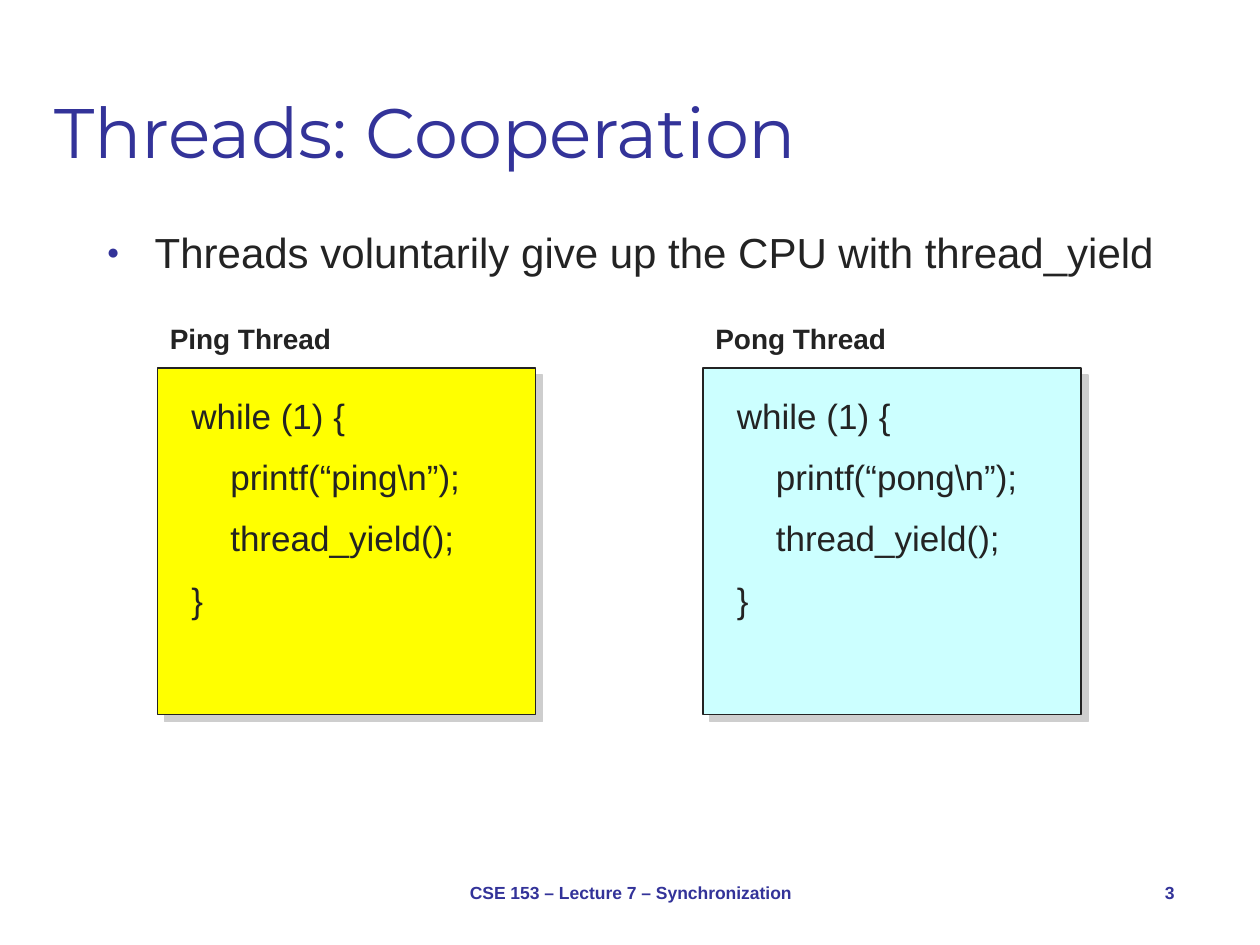
import pptx
import pptx.util
import pptx.dml.color
import pptx.enum.shapes
import pptx.enum.text
import pptx.oxml
import pptx.oxml.ns
from pptx.util import Inches, Pt

COLORS = {
    "navy": "333399",
    "ink": "232323",
    "yellow": "FFFF00",
    "cyan": "CCFFFF",
    "shadow": "CECECE",
}
TITLE = "Threads: Cooperation"
BULLET = "Threads voluntarily give up the CPU with thread_yield"
THREADS = [("Ping Thread", "ping", "yellow", 1.25), ("Pong Thread", "pong", "cyan", 5.58)]
ALIGN = pptx.enum.text.PP_ALIGN
ANCHOR = pptx.enum.text.MSO_ANCHOR
FOOTERS = [
    ("CSE 153 – Lecture 7 – Synchronization", 3.42, 3.17, ALIGN.CENTER),
    ("3", 8.75, 0.67, ALIGN.RIGHT),
]
BOX_TOP, BOX_WIDTH, BOX_HEIGHT = 2.92, 3, 2.75
CODE_INDENT = 0.31


def rgb(name):
    return pptx.dml.color.RGBColor.from_string(COLORS[name])


def write(shape, text, size, color, bold=False, font="Arial", align=ALIGN.LEFT,
          anchor=ANCHOR.TOP, space=0):
    frame = shape.text_frame
    frame.text = text
    frame.word_wrap = True
    frame.vertical_anchor = anchor
    for paragraph in frame.paragraphs:
        paragraph.alignment = align
        paragraph.space_before = Pt(space)
        for run in paragraph.runs:
            run.font.size = Pt(size)
            run.font.name = font
            run.font.bold = bold
            run.font.color.rgb = rgb(color)
    return frame


def add_text(slide, left, top, width, height, text, size, color, **style):
    box = slide.shapes.add_textbox(Inches(left), Inches(top), Inches(width), Inches(height))
    return write(box, text, size, color, **style)


def parse_drawing(tag, attributes, content=""):
    return pptx.oxml.parse_xml(
        f'<a:{tag} {pptx.oxml.ns.nsdecls("a")} {attributes}>{content}</a:{tag}>')


def add_bullet(paragraph):
    properties = paragraph._p.get_or_add_pPr()
    properties.set("marL", str(Inches(0.38)))
    properties.set("indent", str(Inches(-0.38)))
    properties.append(parse_drawing("buClr", "", f'<a:srgbClr val="{COLORS["navy"]}"/>'))
    properties.append(parse_drawing("buSzPct", 'val="50000"'))
    properties.append(parse_drawing("buFont", 'typeface="Arial"'))
    properties.append(parse_drawing("buChar", 'char="●"'))


def add_thread(slide, label, word, fill, left):
    box = slide.shapes.add_shape(
        pptx.enum.shapes.MSO_SHAPE.RECTANGLE,
        Inches(left), Inches(BOX_TOP), Inches(BOX_WIDTH), Inches(BOX_HEIGHT))
    box.fill.solid()
    box.fill.fore_color.rgb = rgb(fill)
    box.line.color.rgb = rgb("ink")
    box.line.width = Pt(0.75)
    box._element.spPr.append(parse_drawing(
        "effectLst", "",
        f'<a:outerShdw dist="{Pt(5.7)}" dir="2700000" algn="ctr" rotWithShape="0">'
        f'<a:srgbClr val="{COLORS["shadow"]}"/></a:outerShdw>'))
    code = ["while (1) {", f"printf(“{word}\\n”);", "thread_yield();", "}"]
    frame = add_text(slide, left + 0.17, BOX_TOP + 0.16, 2.67, 1.93,
                     "\n".join(code), 20, "ink", space=11)
    for paragraph in frame.paragraphs[1:-1]:
        paragraph._p.get_or_add_pPr().set("marL", str(Inches(CODE_INDENT)))
    add_text(slide, left, BOX_TOP - 0.42, 1.83, 0.37, label, 16, "ink", bold=True, space=8)


def main():
    presentation = pptx.Presentation()
    presentation.slide_width = Inches(10)
    presentation.slide_height = Inches(7.5)
    slide = presentation.slides.add_slide(presentation.slide_layouts[5])

    title = slide.shapes.title
    title.left, title.top = Inches(0.33), Inches(0.17)
    title.width, title.height = Inches(9.33), Inches(1.25)
    write(title, TITLE, 40, "navy", font="Montserrat", anchor=ANCHOR.BOTTOM)

    body = add_text(slide, 0.75, 1.75, 8.67, 0.6, BULLET, 24, "ink", space=4.8)
    add_bullet(body.paragraphs[0])

    for thread in THREADS:
        add_thread(slide, *thread)

    for text, left, width, align in FOOTERS:
        add_text(slide, left, 6.83, width, 0.5, text, 10, "navy", bold=True,
                 align=align, anchor=ANCHOR.MIDDLE)

    presentation.save("out.pptx")


if __name__ == "__main__":
    main()
